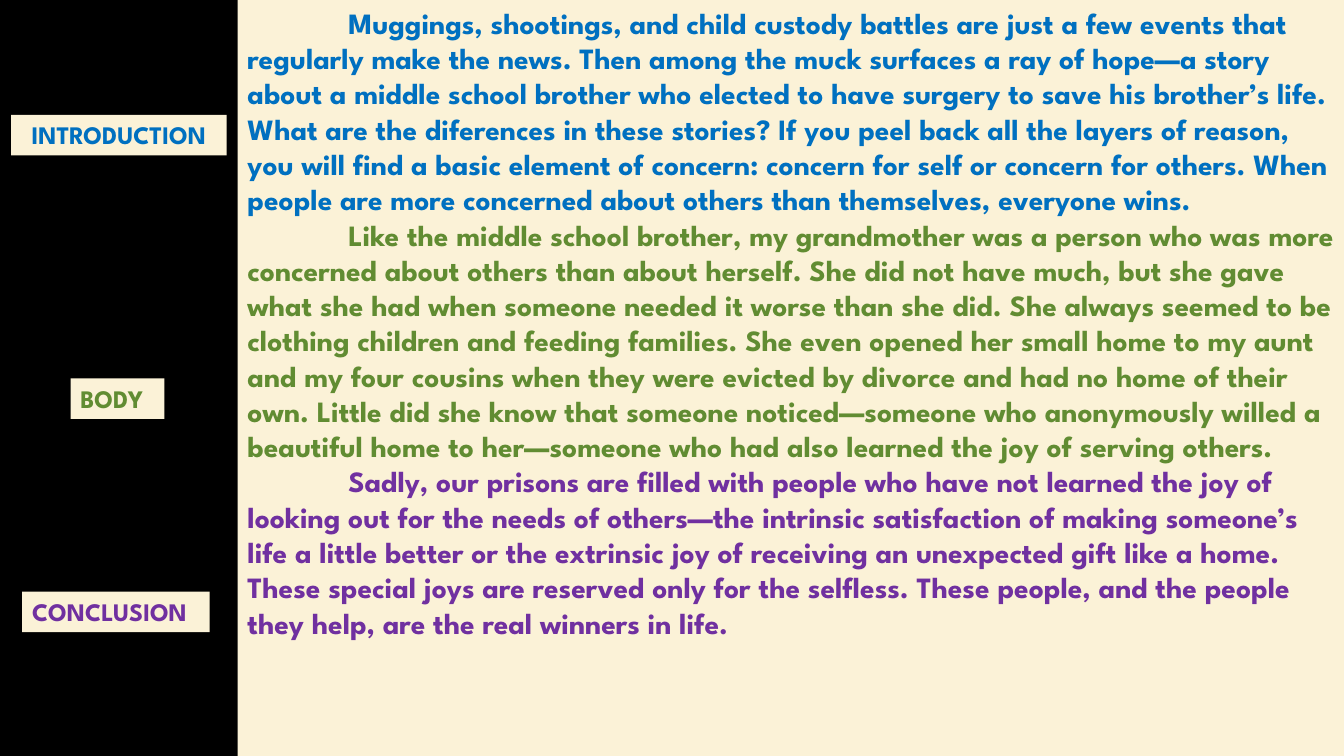
from dataclasses import dataclass

from pptx import Presentation
from pptx.dml.color import RGBColor
from pptx.enum.text import MSO_ANCHOR, PP_ALIGN
from pptx.util import Pt

TOP = MSO_ANCHOR.TOP
LEFT, CENTER = PP_ALIGN.LEFT, PP_ALIGN.CENTER
BLANK_LAYOUT = 6


@dataclass(frozen=True)
class Theme:
    """Colours, font and type sizes of the slide."""
    font: str = "League Spartan"
    background: str = "000000"
    panel: str = "FBF2D7"
    introduction: str = "0070C0"
    body: str = "618C32"
    conclusion: str = "7030A0"
    essay_size: int = 21
    label_size: int = 18
    first_line_indent: int = 72


class EssaySlide:
    """Draws the essay and its section labels on one slide."""

    def __init__(self, presentation, theme):
        self.theme = theme
        self.slide = presentation.slides.add_slide(presentation.slide_layouts[BLANK_LAYOUT])
        fill = self.slide.background.fill
        fill.solid()
        fill.fore_color.rgb = RGBColor.from_string(theme.background)

    def add_panel(self, left, top, width, height):
        shape = self.slide.shapes.add_textbox(Pt(left), Pt(top), Pt(width), Pt(height))
        shape.fill.solid()
        shape.fill.fore_color.rgb = RGBColor.from_string(self.theme.panel)
        frame_format = {"word_wrap": True, "vertical_anchor": TOP}
        for name, value in frame_format.items():
            setattr(shape.text_frame, name, value)
        return shape.text_frame

    def add_text(self, paragraph, text, size, color, alignment=LEFT):
        paragraph.alignment = alignment
        run = paragraph.add_run()
        run.text = text
        font_format = {"name": self.theme.font, "size": Pt(size), "bold": True}
        for name, value in font_format.items():
            setattr(run.font, name, value)
        run.font.color.rgb = RGBColor.from_string(color)

    def add_label(self, text, color, left, top, width, alignment):
        frame = self.add_panel(left, top, width, 29)
        self.add_text(frame.paragraphs[0], text, self.theme.label_size, color, alignment)

    def add_essay(self, sections, left, top, width, height):
        frame = self.add_panel(left, top, width, height)
        for index, (text, color) in enumerate(sections):
            paragraph = frame.add_paragraph() if index else frame.paragraphs[0]
            properties = paragraph._p.get_or_add_pPr()
            properties.set("marL", "0")
            properties.set("indent", str(Pt(self.theme.first_line_indent)))
            self.add_text(paragraph, text, self.theme.essay_size, color)


def main():
    theme = Theme()
    presentation = Presentation()
    presentation.slide_width, presentation.slide_height = Pt(960), Pt(540)
    essay_slide = EssaySlide(presentation, theme)

    sections = [
        ("Muggings, shootings, and child custody battles are just a few events that "
         "regularly make the news. Then among the muck surfaces a ray of hope—a story "
         "about a middle school brother who elected to have surgery to save his brother’s "
         "life. What are the diferences in these stories? If you peel back all the layers "
         "of reason, you will find a basic element of concern: concern for self or concern "
         "for others. When people are more concerned about others than themselves, "
         "everyone wins.", theme.introduction),
        ("Like the middle school brother, my grandmother was a person who was more "
         "concerned about others than about herself. She did not have much, but she gave "
         "what she had when someone needed it worse than she did. She always seemed to be "
         "clothing children and feeding families. She even opened her small home to my "
         "aunt and my four cousins when they were evicted by divorce and had no home of "
         "their own. Little did she know that someone noticed—someone who anonymously "
         "willed a beautiful home to her—someone who had also learned the joy of serving "
         "others.", theme.body),
        ("Sadly, our prisons are filled with people who have not learned the joy of "
         "looking out for the needs of others—the intrinsic satisfaction of making "
         "someone’s life a little better or the extrinsic joy of receiving an unexpected "
         "gift like a home. These special joys are reserved only for the selfless. These "
         "people, and the people they help, are the real winners in life.",
         theme.conclusion),
    ]
    essay_slide.add_essay(sections, 169.7, 0, 790.3, 540)

    labels = [
        ("INTRODUCTION", theme.introduction, 7.9, 82, 154, CENTER),
        ("BODY", theme.body, 50.4, 270.2, 67, LEFT),
        ("CONCLUSION", theme.conclusion, 15.8, 422.5, 134, LEFT),
    ]
    for label in labels:
        essay_slide.add_label(*label)

    presentation.save("out.pptx")


if __name__ == "__main__":
    main()
